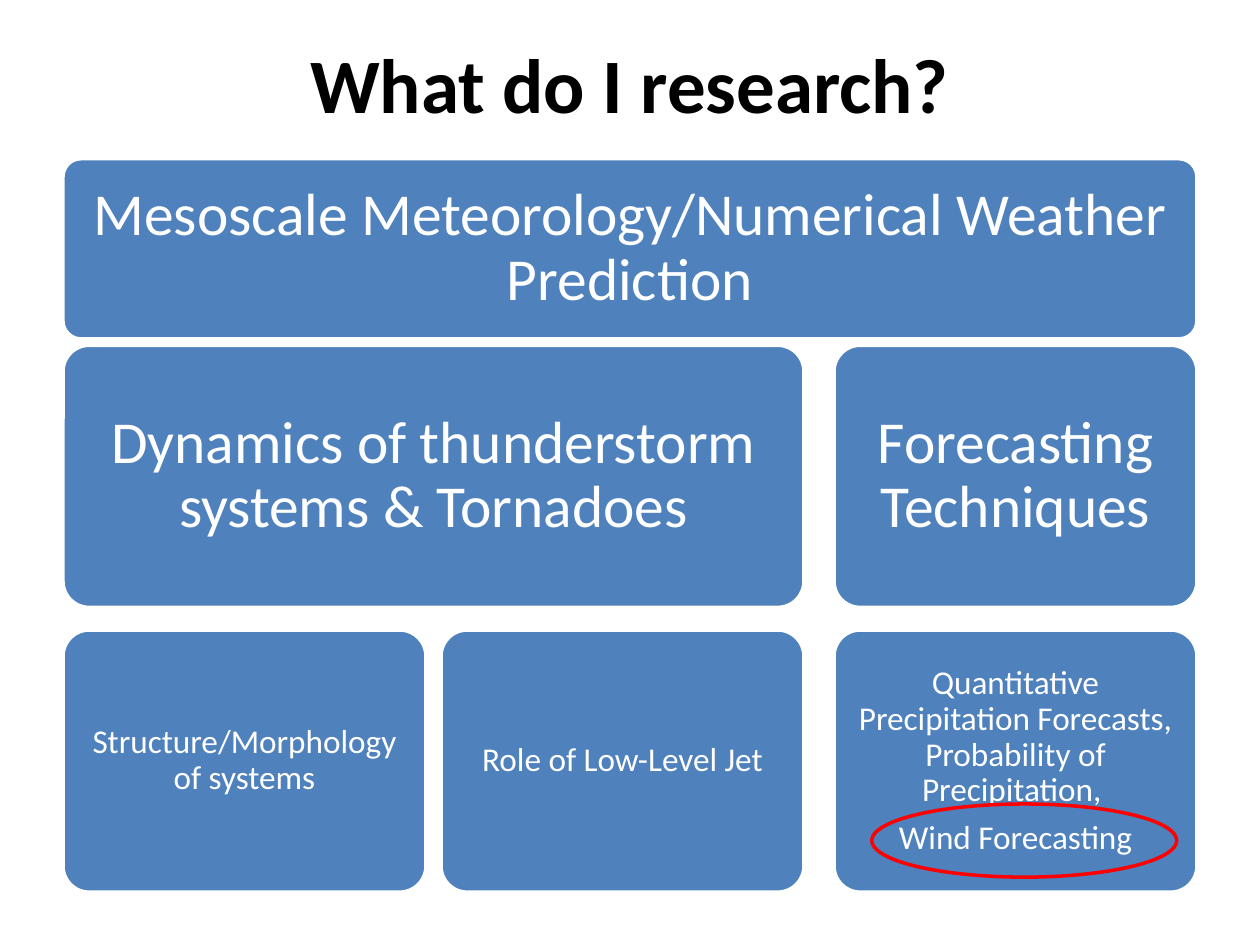
"""Build the slide of research topics as three tiers of boxes."""
from pptx import Presentation, util as u
from pptx.dml.color import RGBColor
from pptx.enum import shapes, text

TITLE = "What do I research?"
BLUE, WHITE, RED, BLACK = "4F81BD", "FFFFFF", "FF0000", "000000"
COLS = [36, 252, 476.6]
WIDE = 207.4
ROWS = [(90.7, 103), (197.3, 149.8), (360, 149.8)]
BIG = {"size": 34, "inset": 10, "after": 12}
SMALL = {"size": 19, "inset": 6, "after": 6.65}
BOXES = [
    (0, 0, 2, BIG, ["Mesoscale Meteorology/Numerical Weather Prediction"]),
    (1, 0, 1, BIG, ["Dynamics of thunderstorm systems & Tornadoes"]),
    (2, 0, 0, SMALL, ["Structure/Morphology of systems"]),
    (2, 1, 1, SMALL, ["Role of Low-Level Jet"]),
    (1, 2, 2, BIG, ["Forecasting Techniques"]),
    (2, 2, 2, SMALL, [
        "Quantitative Precipitation Forecasts, Probability of Precipitation, ",
        "Wind Forecasting"]),
]


def rgb(code):
    """Turn a hex string into a colour."""
    return RGBColor.from_string(code)


def place(*nums):
    """Turn point values into lengths."""
    return [u.Pt(n) for n in nums]


def write(shape, lines, size, color, inset, after=0, space=1.0, bold=False):
    """Fill a shape with centred paragraphs."""
    frame = shape.text_frame
    sides = {f"margin_{s}": u.Pt(inset) for s in ("left", "top", "right", "bottom")}
    form = {"word_wrap": True, "vertical_anchor": text.MSO_ANCHOR.MIDDLE, **sides}
    for name, val in form.items():
        setattr(frame, name, val)
    frame.text = "\n".join(lines)
    look = {"alignment": text.PP_ALIGN.CENTER, "line_spacing": space,
            "space_after": u.Pt(after)}
    face = {"name": "Calibri", "size": u.Pt(size), "bold": bold}
    for para in frame.paragraphs:
        for name, val in look.items():
            setattr(para, name, val)
        font = para.runs[0].font
        for name, val in face.items():
            setattr(font, name, val)
        font.color.rgb = rgb(color)


def draw(slide, kind, spot, line, fill=None):
    """Add a preset shape with a two-point outline."""
    shape = slide.shapes.add_shape(kind, *place(*spot))
    shape.shadow.inherit = False
    if fill:
        shape.fill.solid()
        shape.fill.fore_color.rgb = rgb(fill)
    else:
        shape.fill.background()
    shape.line.color.rgb = rgb(line)
    shape.line.width = u.Pt(2)
    return shape


def main():
    """Build and save the deck."""
    deck = Presentation()
    deck.slide_width, deck.slide_height = place(720, 540)
    slide = deck.slides.add_slide(deck.slide_layouts[6])
    head = slide.shapes.add_textbox(*place(36, 2.2, 648, 90))
    write(head, [TITLE], 44, BLACK, 3.6, bold=True)
    for row, first, last, style, lines in BOXES:
        top, high = ROWS[row]
        spot = COLS[first], top, COLS[last] + WIDE - COLS[first], high
        box = draw(slide, shapes.MSO_SHAPE.ROUNDED_RECTANGLE, spot, WHITE, BLUE)
        box.adjustments[0] = 0.1
        write(box, lines, color=WHITE, space=0.9, **style)
    draw(slide, shapes.MSO_SHAPE.OVAL, (498.2, 459.4, 174.2, 41.8), RED)
    deck.save("out.pptx")


if __name__ == "__main__":
    main()
